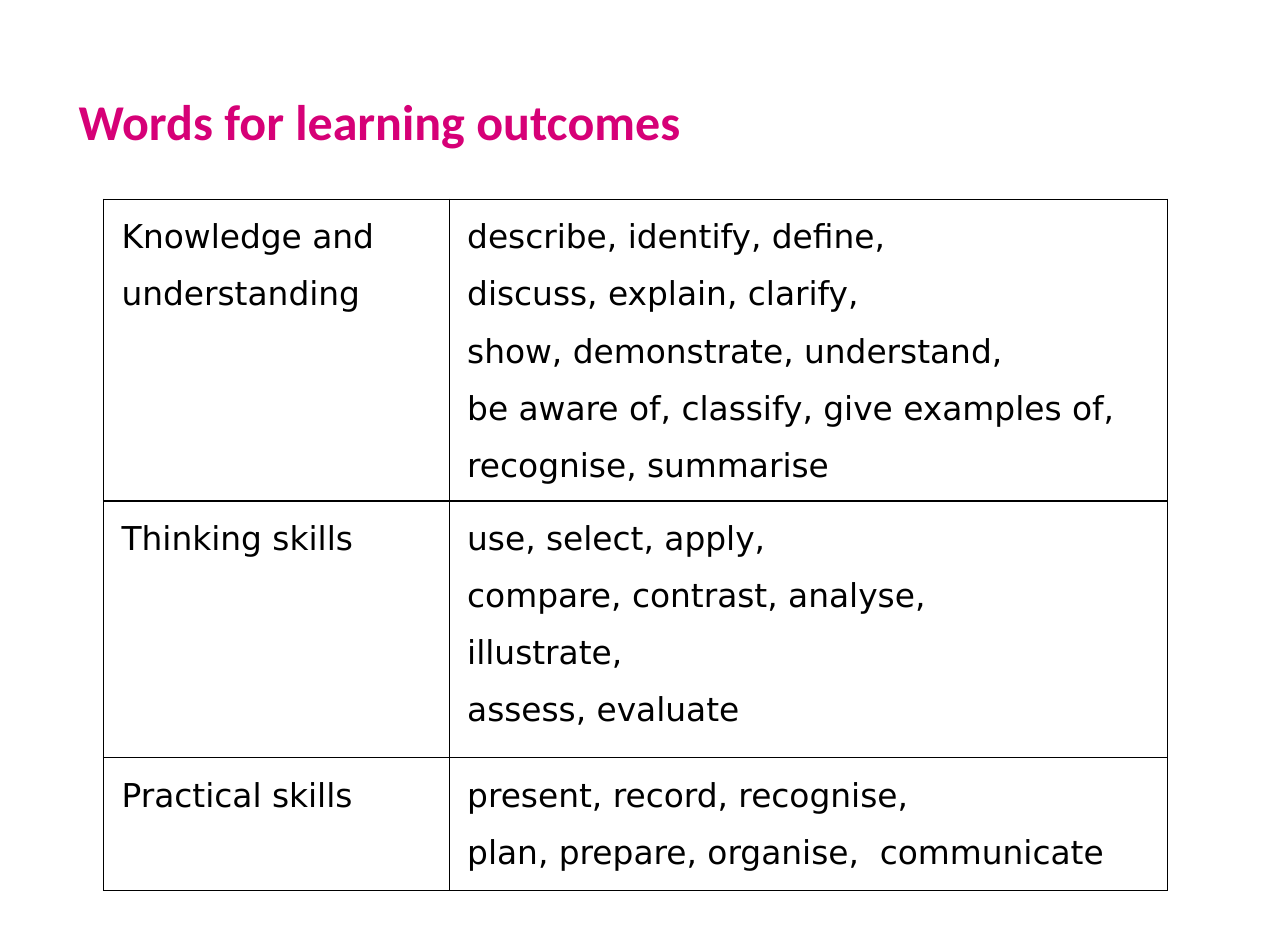
"""Build a slide with a table of verbs for learning outcomes."""
from lxml import etree
from pptx import Presentation
from pptx.dml.color import RGBColor
from pptx.enum import text
from pptx.oxml import ns
from pptx.util import Inches, Pt

PINK = RGBColor(0xD6, 0x00, 0x77)
BLACK = RGBColor(0x00, 0x00, 0x00)
COLUMN_WIDTHS = [3.07, 6.38]
ROW_HEIGHTS = [2.68, 2.28, 1.18]
OUTCOMES = [
    (["Knowledge and understanding"],
     ["describe, identify, define,",
      "discuss, explain, clarify,",
      "show, demonstrate, understand,",
      "be aware of, classify, give examples of,",
      "recognise, summarise"]),
    (["Thinking skills"],
     ["use, select, apply,",
      "compare, contrast, analyse,",
      "illustrate,",
      "assess, evaluate"]),
    (["Practical skills"],
     ["present, record, recognise,",
      "plan, prepare, organise,  communicate"]),
]


def add_run(p, words, font, size, color, bold=False):
    """Add one styled run to a paragraph."""
    r = p.add_run()
    r.text = words
    r.font.name = font
    r.font.size = Pt(size)
    r.font.color.rgb = color
    r.font.bold = bold


def add_title(s, words):
    """Add the slide heading."""
    sp = s.shapes.add_textbox(Inches(0.6), Inches(0.8), Inches(10.29), Inches(0.6))
    tf = sp.text_frame
    tf.word_wrap = True
    tf.vertical_anchor = text.MSO_ANCHOR.MIDDLE
    p = tf.paragraphs[0]
    p.line_spacing = 0.9
    add_run(p, words, "Calibri", 32, PINK, bold=True)


def add_borders(cell):
    """Draw a one-point line on each side of a cell."""
    tc_pr = cell._tc.get_or_add_tcPr()
    for side in ("lnL", "lnR", "lnT", "lnB"):
        ln = etree.SubElement(tc_pr, ns.qn(f"a:{side}"), w=str(Pt(1)))
        fill = etree.SubElement(ln, ns.qn("a:solidFill"))
        etree.SubElement(fill, ns.qn("a:srgbClr"), val=str(BLACK))


def fill_cell(cell, lines):
    """Write a cell's lines, one paragraph each, and style the cell."""
    cell.margin_left = Inches(0.16)
    cell.margin_right = Inches(0.04)
    cell.margin_top = cell.margin_bottom = 0
    add_borders(cell)
    cell.fill.background()
    tf = cell.text_frame
    for i, line in enumerate(lines):
        p = tf.add_paragraph() if i else tf.paragraphs[0]
        p.line_spacing = 1.5
        add_run(p, line, "DejaVu Sans", 21, BLACK)


def add_outcomes_table(s):
    """Add the table that pairs each skill area with its verbs."""
    table = s.shapes.add_table(
        len(ROW_HEIGHTS), len(COLUMN_WIDTHS), Inches(0.92), Inches(1.77),
        Inches(sum(COLUMN_WIDTHS)), Inches(sum(ROW_HEIGHTS))).table
    table.first_row = False
    table.horz_banding = False
    for column, width in zip(table.columns, COLUMN_WIDTHS):
        column.width = Inches(width)
    for row, height, outcome in zip(table.rows, ROW_HEIGHTS, OUTCOMES):
        row.height = Inches(height)
        for cell, lines in zip(row.cells, outcome):
            fill_cell(cell, lines)


def main():
    """Create the presentation and save it."""
    prs = Presentation()
    prs.slide_width = Inches(11.44)
    prs.slide_height = Inches(8.27)
    s = prs.slides.add_slide(prs.slide_layouts[6])
    add_title(s, "Words for learning outcomes")
    add_outcomes_table(s)
    prs.save("out.pptx")


if __name__ == "__main__":
    main()
